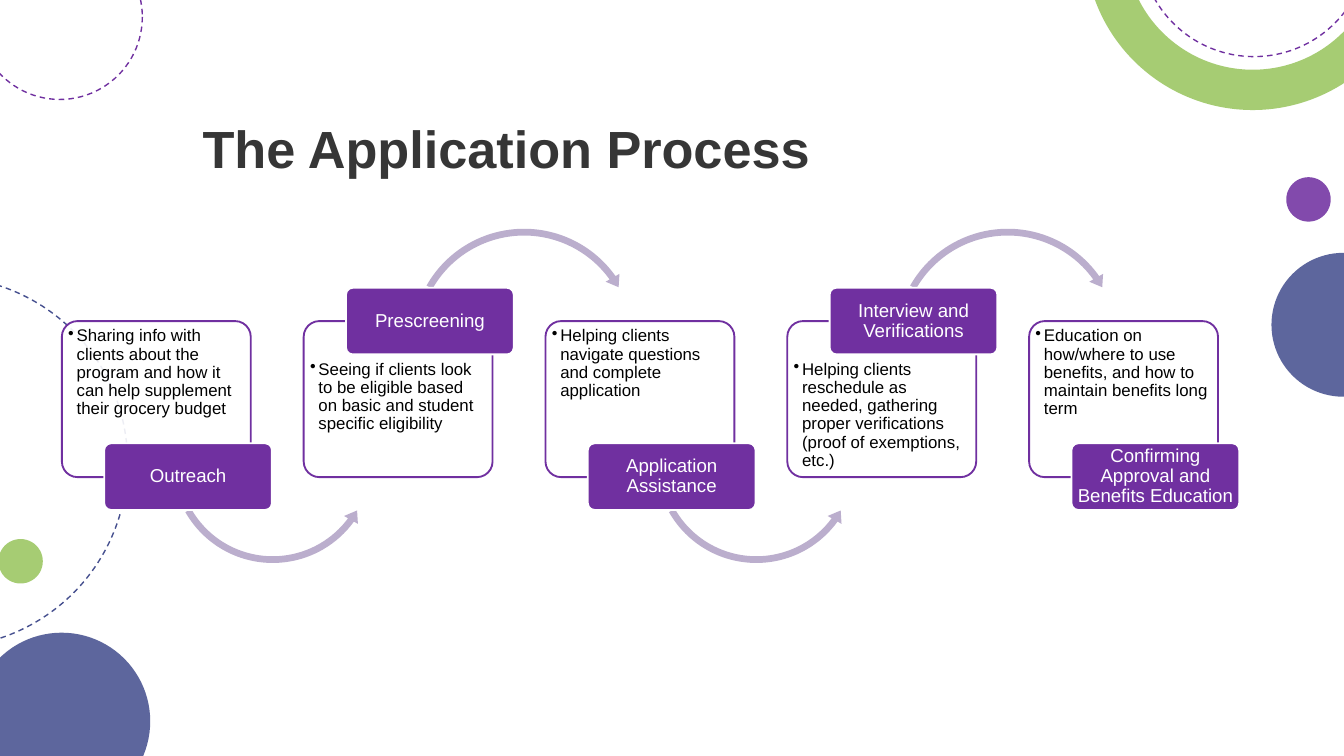
import lxml.etree
import pptx
import pptx.dml.color
import pptx.enum.dml
import pptx.enum.shapes
import pptx.enum.text
import pptx.oxml.ns
import pptx.util

Cm = pptx.util.Cm
Pt = pptx.util.Pt
RGBColor = pptx.dml.color.RGBColor
MSO_SHAPE = pptx.enum.shapes.MSO_SHAPE
MSO_ANCHOR = pptx.enum.text.MSO_ANCHOR
PP_ALIGN = pptx.enum.text.PP_ALIGN
qn = pptx.oxml.ns.qn

PURPLE = RGBColor(0x70, 0x30, 0xA0)
INDIGO = RGBColor(0x46, 0x50, 0x8F)
GREEN = RGBColor(0x99, 0xC5, 0x5F)
LILAC = RGBColor(0xBB, 0xAE, 0xCD)
CHARCOAL = RGBColor(0x36, 0x36, 0x36)
WHITE = RGBColor(0xFF, 0xFF, 0xFF)
BLACK = RGBColor(0x00, 0x00, 0x00)

FIRST_LEFT = 1.17
STEP_PITCH = 4.57

STEPS = [
    ("Outreach", "Sharing info with clients about the program and how it can help "
                 "supplement their grocery budget"),
    ("Prescreening", "Seeing if clients look to be eligible based on basic and student "
                     "specific eligibility"),
    ("Application Assistance", "Helping clients navigate questions and complete application"),
    ("Interview and Verifications", "Helping clients reschedule as needed, gathering proper "
                                    "verifications (proof of exemptions, etc.)"),
    ("Confirming Approval and Benefits Education", "Education on how/where to use benefits, "
                                                   "and how to maintain benefits long term"),
]


def add_shape(slide, kind, left, top, width, height, fill=None, line=None,
              line_width=1, opacity=100, adjustments=()):
    shape = slide.shapes.add_shape(kind, Cm(left), Cm(top), Cm(width), Cm(height))
    shape.shadow.inherit = False
    for index, value in enumerate(adjustments):
        shape.adjustments[index] = value
    if fill is None:
        shape.fill.background()
    else:
        shape.fill.solid()
        shape.fill.fore_color.rgb = fill
        if opacity < 100:
            color = shape.element.spPr.find(qn("a:solidFill"))[0]
            lxml.etree.SubElement(color, qn("a:alpha"), val=str(opacity * 1000))
    if line is None:
        shape.line.fill.background()
    else:
        shape.line.color.rgb = line
        shape.line.width = Pt(line_width)
    return shape


def add_dashed_circle(slide, left, top, size, color):
    circle = add_shape(slide, MSO_SHAPE.OVAL, left, top, size, size, line=color, line_width=0.75)
    circle.line.dash_style = pptx.enum.dml.MSO_LINE.DASH
    return circle


def add_disc(slide, left, top, size, color):
    add_shape(slide, MSO_SHAPE.OVAL, left, top, size, size, fill=color, opacity=87)


def add_decoration(slide):
    add_dashed_circle(slide, -4.6, 5.23, 7.01, INDIGO)
    add_disc(slide, -0.51, 11.96, 3.35, INDIGO)
    add_disc(slide, -0.03, 10.19, 0.84, GREEN)
    add_disc(slide, 24.03, 4.78, 2.72, INDIGO)
    add_shape(slide, MSO_SHAPE.DONUT, 20.5, -4.27, 6.35, 6.35, fill=GREEN,
              opacity=87, adjustments=[0.12])
    add_disc(slide, 24.31, 3.35, 0.84, PURPLE)
    add_dashed_circle(slide, 21.54, -3.25, 4.32, PURPLE)
    add_dashed_circle(slide, -0.43, -1.24, 3.12, PURPLE).rotation = 180


def write_text(shape, text, size, color, anchor, bold=False):
    frame = shape.text_frame
    frame.word_wrap = True
    frame.vertical_anchor = anchor
    paragraph = frame.paragraphs[0]
    paragraph.text = text
    paragraph.font.name = "Arial"
    paragraph.font.size = Pt(size)
    paragraph.font.bold = bold
    paragraph.font.color.rgb = color
    return paragraph


def set_margins(shape, horizontal, vertical):
    frame = shape.text_frame
    frame.margin_left = frame.margin_right = Cm(horizontal)
    frame.margin_top = frame.margin_bottom = Cm(vertical)


def add_bullet(paragraph, indent):
    properties = paragraph._p.get_or_add_pPr()
    properties.set("marL", str(Cm(indent)))
    properties.set("indent", str(-Cm(indent)))
    bullet = lxml.etree.Element(qn("a:buChar"), char="•")
    properties.insert_element_before(bullet, "a:tabLst", "a:defRPr", "a:extLst")


def add_title(slide, text):
    box = slide.shapes.add_textbox(Cm(3.58), Cm(2.06), Cm(19.28), Cm(1.47))
    write_text(box, text, 28, CHARCOAL, MSO_ANCHOR.MIDDLE, bold=True)


def add_panel(slide, left, text, text_top):
    add_shape(slide, MSO_SHAPE.ROUNDED_RECTANGLE, left, 6.07, 3.57, 2.95, fill=WHITE,
              line=PURPLE, opacity=90, adjustments=[0.1])
    box = slide.shapes.add_textbox(Cm(left + 0.07), Cm(text_top), Cm(3.43), Cm(2.19))
    set_margins(box, 0.05, 0.05)
    paragraph = write_text(box, text, 9, BLACK, MSO_ANCHOR.TOP)
    paragraph.line_spacing = 0.9
    add_bullet(paragraph, 0.16)


def add_arrow(slide, left, curves_up):
    if curves_up:
        add_shape(slide, MSO_SHAPE.CIRCULAR_ARROW, left + 1.96, 4.24, 4.41, 4.41, fill=LILAC,
                  adjustments=[0.029, 3.538, 194.707, 125.755, 0.034])
    else:
        add_shape(slide, MSO_SHAPE.LEFT_CIRCULAR_ARROW, left + 2, 6.76, 3.97, 3.97, fill=LILAC,
                  adjustments=[0.032, 3.976, 21.731, 90.245, 0.038])


def add_label(slide, left, top, text):
    label = add_shape(slide, MSO_SHAPE.ROUNDED_RECTANGLE, left, top, 3.17, 1.26, fill=PURPLE,
                      line=WHITE, adjustments=[0.1])
    set_margins(label, 0.05, 0.03)
    paragraph = write_text(label, text, 10, WHITE, MSO_ANCHOR.MIDDLE)
    paragraph.alignment = PP_ALIGN.CENTER
    paragraph.line_spacing = 0.9


def add_process(slide):
    for index, (name, description) in enumerate(STEPS):
        left = FIRST_LEFT + index * STEP_PITCH
        label_on_top = index % 2 == 1
        add_panel(slide, left, description, 6.77 if label_on_top else 6.14)
        if index < len(STEPS) - 1:
            add_arrow(slide, left, label_on_top)
        add_label(slide, left + 0.8, 5.44 if label_on_top else 8.38, name)


def main():
    presentation = pptx.Presentation()
    presentation.slide_width = Cm(25.4)
    presentation.slide_height = Cm(14.29)
    slide = presentation.slides.add_slide(presentation.slide_layouts[6])
    add_decoration(slide)
    add_title(slide, "The Application Process")
    add_process(slide)
    presentation.save("out.pptx")


if __name__ == "__main__":
    main()
